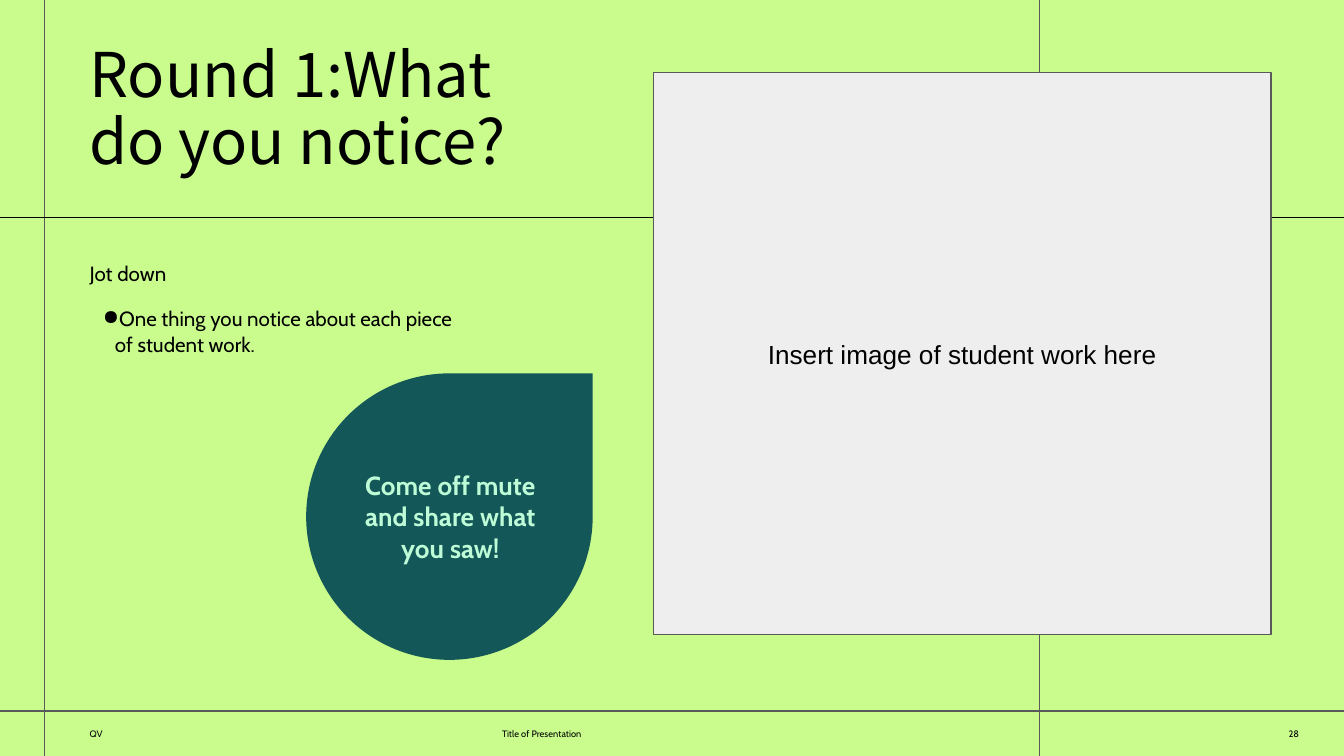
from dataclasses import dataclass

from lxml.etree import SubElement
from pptx import Presentation
from pptx.dml.color import RGBColor
from pptx.enum.shapes import MSO_CONNECTOR, MSO_SHAPE
from pptx.enum.text import MSO_ANCHOR as Anchor, MSO_AUTO_SIZE as AutoSize, PP_ALIGN as Align
from pptx.oxml.ns import qn
from pptx.util import Pt

WIDTH, HEIGHT = 720, 405
MARGIN, FOOTER_TOP = 48, 381


@dataclass(frozen=True)
class Theme:
    background: str = "C9FC8D"
    ink: str = "000000"
    rule: str = "595959"
    panel: str = "EEEEEE"
    drop: str = "145758"
    mint: str = "BDFCD7"
    title_font: str = "Noto Sans CJK KR"
    body_font: str = "Cabin"
    panel_font: str = "Arial"
    title_size: float = 33
    callout_size: float = 14
    body_size: float = 11
    footer_size: float = 5
    rule_width: float = 0.75


class SlideBuilder:
    def __init__(self, slide, theme):
        self.slide = slide
        self.theme = theme
        fill = slide.background.fill
        fill.solid()
        fill.fore_color.rgb = RGBColor.from_string(theme.background)

    def rule(self, x1, y1, x2, y2, color=None):
        line = self.slide.shapes.add_connector(
            MSO_CONNECTOR.STRAIGHT, Pt(x1), Pt(y1), Pt(x2), Pt(y2))
        self.outline(line, color or self.theme.rule)
        SubElement(line._element.spPr, qn("a:effectLst"))

    def outline(self, shape, color):
        shape.line.color.rgb = RGBColor.from_string(color)
        shape.line.width = Pt(self.theme.rule_width)

    def shape(self, kind, box, fill, border=None):
        shape = self.slide.shapes.add_shape(kind, *map(Pt, box))
        shape.shadow.inherit = False
        shape.fill.solid()
        shape.fill.fore_color.rgb = RGBColor.from_string(fill)
        if border:
            self.outline(shape, border)
        else:
            shape.line.fill.background()
        return shape

    def set_text(self, shape, text, size, font=None, color=None, align=Align.LEFT,
                 anchor=Anchor.TOP, inset=0, spacing=None):
        frame = shape.text_frame
        frame.word_wrap = True
        frame.vertical_anchor = anchor
        frame.margin_left = frame.margin_right = Pt(inset)
        frame.margin_top = frame.margin_bottom = Pt(inset)
        paragraph = frame.paragraphs[0]
        paragraph.text = text
        paragraph.alignment = align
        if spacing:
            paragraph.line_spacing = spacing
        paragraph.font.name = font or self.theme.body_font
        paragraph.font.size = Pt(size)
        paragraph.font.color.rgb = RGBColor.from_string(color or self.theme.ink)
        return paragraph

    def text(self, box, text, size, grow=True, **style):
        area = self.slide.shapes.add_textbox(*map(Pt, box))
        paragraph = self.set_text(area, text, size, **style)
        area.text_frame.auto_size = AutoSize.SHAPE_TO_FIT_TEXT if grow else AutoSize.NONE
        return area, paragraph

    def bullet(self, box, text, size, inset, hang, **style):
        area, paragraph = self.text(box, text, size, **style)
        area.text_frame.margin_left = Pt(inset)
        props = paragraph._p.get_or_add_pPr()
        props.set("marL", str(Pt(hang)))
        props.set("indent", str(-Pt(hang)))
        mark = props.makeelement(qn("a:buChar"), {"char": "●"})
        props.insert_element_before(mark, "a:tabLst", "a:defRPr", "a:extLst")


def main():
    theme = Theme()
    deck = Presentation()
    deck.slide_width, deck.slide_height = Pt(WIDTH), Pt(HEIGHT)
    page = SlideBuilder(deck.slides.add_slide(deck.slide_layouts[6]), theme)

    # Rules and footer
    page.rule(0, FOOTER_TOP, WIDTH, FOOTER_TOP)
    page.rule(24, 0, 24, HEIGHT)
    footer = [
        (MARGIN, "QV", Align.LEFT),
        (269, "Title of Presentation", Align.LEFT),
        (485, "28", Align.RIGHT),
    ]
    for left, label, align in footer:
        page.text((left, FOOTER_TOP, 211, HEIGHT - FOOTER_TOP), label, theme.footer_size,
                  grow=False, align=align, anchor=Anchor.MIDDLE)
    page.rule(0, 116.5, WIDTH, 116.5, theme.ink)
    page.rule(557, 0, 557, HEIGHT)

    # Title
    page.text((MARGIN, 24, 429, 72), "Round 1:What \vdo you notice?", theme.title_size,
              font=theme.title_font, spacing=0.9)

    # Teardrop callout
    page.shape(MSO_SHAPE.TEAR, (164, 200, 153.5, 153.5), theme.drop)
    _, callout = page.text((186.5, 251.5, 109.5, 51), "Come off mute and share what you saw!",
                           theme.callout_size, color=theme.mint, align=Align.CENTER)
    callout.font.bold = True

    # Instructions
    page.bullet((MARGIN, 163.5, 206, 27), "One thing you notice about each piece of student work.",
                theme.body_size, inset=7.2, hang=6.5, spacing=1.05)
    page.text((MARGIN, 139, 206, 13.5), "Jot down", theme.body_size, spacing=1.05)

    # Student work panel
    panel = page.shape(MSO_SHAPE.RECTANGLE, (350, 39, 331, 301), theme.panel, theme.rule)
    page.set_text(panel, "Insert image of student work here", theme.callout_size,
                  font=theme.panel_font, align=Align.CENTER, anchor=Anchor.MIDDLE, inset=7.2)

    deck.save("out.pptx")


if __name__ == "__main__":
    main()
